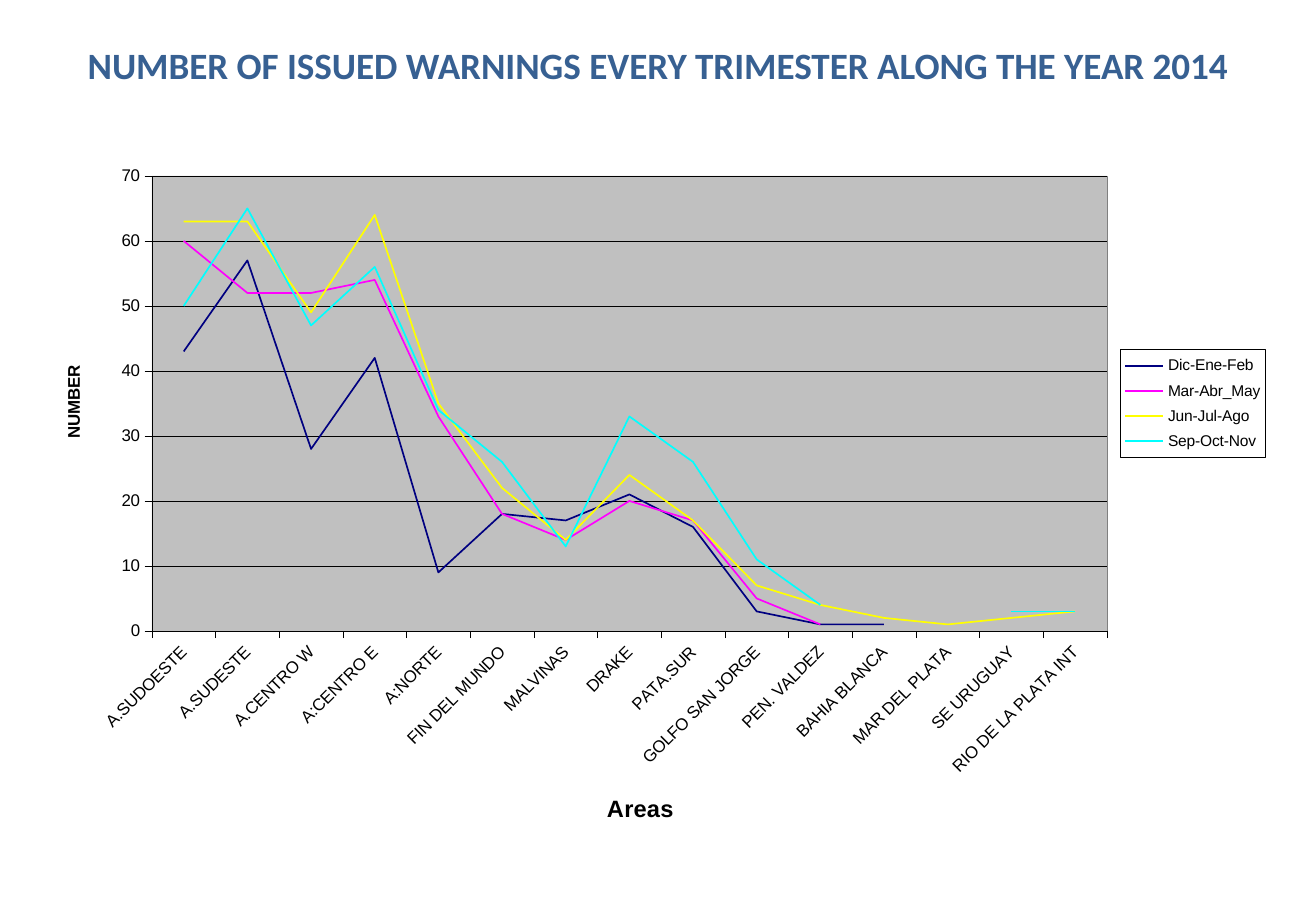
from lxml import etree
from pptx import Presentation
from pptx.chart.data import CategoryChartData
from pptx.dml.color import RGBColor
from pptx.enum.chart import XL_CHART_TYPE as ChartType, XL_LEGEND_POSITION as LegendPos
from pptx.enum.chart import XL_MARKER_STYLE as Marker, XL_TICK_MARK as Tick
from pptx.enum.text import MSO_ANCHOR as Anchor, PP_ALIGN as Align
from pptx.oxml import parse_xml
from pptx.oxml.ns import nsdecls, qn
from pptx.util import Inches, Pt

WIDTH, HEIGHT = 10.83, 7.5
CHART_W, CHART_H = 10.08, 6.15
COLORS = {"title": "376092", "ink": "000000", "plot": "C0C0C0", "border": "808080", "paper": "FFFFFF"}
AREAS = ["A.SUDOESTE", "A.SUDESTE", "A.CENTRO W", "A:CENTRO E", "A:NORTE",
         "FIN DEL MUNDO", "MALVINAS", "DRAKE", "PATA.SUR", "GOLFO SAN JORGE",
         "PEN. VALDEZ", "BAHIA BLANCA", "MAR DEL PLATA", "SE URUGUAY",
         "RIO DE LA PLATA INT"]
TRIMESTERS = [
    ("Dic-Ene-Feb", "000080", [43, 57, 28, 42, 9, 18, 17, 21, 16, 3, 1, 1, None, None, None]),
    ("Mar-Abr_May", "FF00FF", [60, 52, 52, 54, 33, 18, 14, 20, 17, 5, 1, None, None, None, None]),
    ("Jun-Jul-Ago", "FFFF00", [63, 63, 49, 64, 35, 22, 14, 24, 17, 7, 4, 2, 1, 2, 3]),
    ("Sep-Oct-Nov", "00FFFF", [50, 65, 47, 56, 34, 26, 13, 33, 26, 11, 4, None, None, 3, 3]),
]


def style_font(font, name, size, color, bold=False):
    font.name, font.size, font.bold = name, Pt(size), bold
    font.color.rgb = RGBColor.from_string(color)


def style_line(line, color, width):
    line.color.rgb = RGBColor.from_string(color)
    line.width = Pt(width)


def frame(fill, line):
    return parse_xml(
        f"<c:spPr {nsdecls('c', 'a')}><a:solidFill><a:srgbClr val='{fill}'/></a:solidFill>"
        f"<a:ln w='3175'><a:solidFill><a:srgbClr val='{line}'/></a:solidFill></a:ln></c:spPr>")


def place(parent, index, x, y, w=None, h=None, inner=False):
    for old in parent.findall(qn("c:layout")):
        parent.remove(old)
    layout = parse_xml(f"<c:layout {nsdecls('c')}><c:manualLayout/></c:layout>")
    values = [("layoutTarget", "inner")] if inner else []
    values += [("xMode", "edge"), ("yMode", "edge"), ("x", x / CHART_W), ("y", y / CHART_H)]
    if w:
        values += [("w", w / CHART_W), ("h", h / CHART_H)]
    for tag, value in values:
        etree.SubElement(layout[0], qn(f"c:{tag}")).set("val", str(value))
    parent.insert(index, layout)


def rotate(body, degrees):
    body.set("rot", str(degrees * 60000))
    body.set("vert", "horz")


def add_title(slide, text):
    tb = slide.shapes.add_textbox(Inches(0.3), Inches(0.3), Inches(10.23), Inches(1.25))
    tf = tb.text_frame
    tf.word_wrap = True
    tf.vertical_anchor = Anchor.TOP
    p = tf.paragraphs[0]
    p.text = text
    p.alignment = Align.CENTER
    style_font(p.runs[0].font, "Calibri", 22, COLORS["title"], True)


def style_axis(axis, title, size, x, y):
    axis.major_tick_mark = Tick.OUTSIDE
    axis.minor_tick_mark = Tick.NONE
    style_line(axis.format.line, COLORS["ink"], 0.25)
    style_font(axis.tick_labels.font, "Arial", 10, COLORS["ink"])
    tf = axis.axis_title.text_frame
    tf.text = title
    style_font(tf.paragraphs[0].runs[0].font, "Arial", size, COLORS["ink"], True)
    place(tf._txBody.getparent().getparent(), 1, x, y)
    return tf


def style_plot(chart):
    area = chart.element.find(".//" + qn("c:plotArea"))
    place(area, 0, 0.87, 0.77, 7.86, 3.75, inner=True)
    area.append(frame(COLORS["plot"], COLORS["border"]))


def style_legend(chart):
    chart.has_legend = True
    legend = chart.legend
    legend.position = LegendPos.RIGHT
    legend.include_in_layout = False
    style_font(legend.font, "Arial", 9.2, COLORS["ink"])
    node = chart.element.find(".//" + qn("c:legend"))
    place(node, 1, 8.84, 2.2, 1.19, 0.89)
    node.find(qn("c:txPr")).addprevious(frame(COLORS["paper"], COLORS["ink"]))


def add_warnings_chart(slide):
    data = CategoryChartData()
    data.categories = AREAS
    for name, _, values in TRIMESTERS:
        data.add_series(name, values)
    chart = slide.shapes.add_chart(ChartType.LINE, Inches(0.38), Inches(0.68),
                                   Inches(CHART_W), Inches(CHART_H), data).chart
    chart.has_title = False
    style_font(chart.font, "Arial", 10, COLORS["ink"])
    chart.plots[0].vary_by_categories = False
    for series, (_, color, _) in zip(chart.plots[0].series, TRIMESTERS):
        series.smooth = False
        series.marker.style = Marker.NONE
        style_line(series.format.line, color, 1)

    style_axis(chart.category_axis, "Areas", 14, 4.58, 5.82)
    labels = chart.element.find(".//" + qn("c:catAx") + "/" + qn("c:txPr"))
    rotate(labels.find(qn("a:bodyPr")), -45)
    axis = chart.value_axis
    axis.minimum_scale, axis.maximum_scale, axis.major_unit = 0, 70, 10
    axis.has_major_gridlines = True
    style_line(axis.major_gridlines.format.line, COLORS["ink"], 0.25)
    tf = style_axis(axis, "NUMBER", 10, 0.11, 2.31)
    rotate(tf._txBody.find(qn("a:bodyPr")), -90)
    style_plot(chart)
    style_legend(chart)


def main():
    prs = Presentation()
    prs.slide_width, prs.slide_height = Inches(WIDTH), Inches(HEIGHT)
    slide = prs.slides.add_slide(prs.slide_layouts[6])
    add_title(slide, "NUMBER OF ISSUED WARNINGS EVERY TRIMESTER ALONG THE YEAR 2014")
    add_warnings_chart(slide)
    prs.save("out.pptx")


if __name__ == "__main__":
    main()
